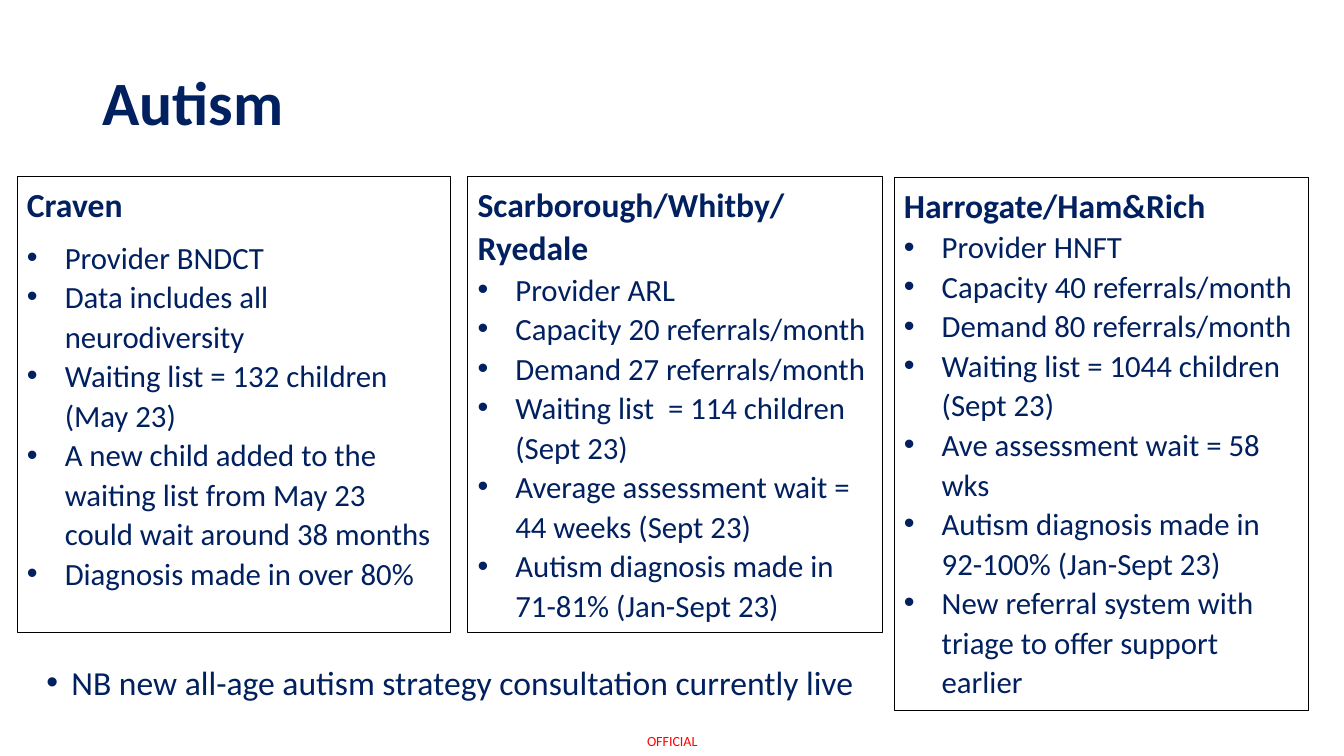
"""Build the autism waiting list slide."""
import pptx
import pptx.dml.color
import pptx.enum.shapes
import pptx.enum.text
import pptx.util
from lxml import etree

Pt = pptx.util.Pt
ALIGN = pptx.enum.text.PP_ALIGN
ANCHOR = pptx.enum.text.MSO_ANCHOR
COLORS = {"navy": "002060", "red": "FF0000", "white": "FFFFFF", "black": "000000"}
FONT = "Calibri"
TITLE = "Autism"
NOTE = "NB new all-age autism strategy consultation currently live"
LABEL = "OFFICIAL"
PANELS = [
    {"box": (12.2, 126, 309.6, 325.4), "head": "Craven", "gap": 8, "items": [
        "Provider BNDCT",
        "Data includes all neurodiversity",
        "Waiting list = 132 children (May 23)",
        "A new child added to the waiting list from May 23 could wait around 38 months",
        "Diagnosis made in over 80%"]},
    {"box": (334.1, 126, 296, 325.4), "head": "Scarborough/Whitby/ Ryedale", "gap": 0, "items": [
        "Provider ARL",
        "Capacity 20 referrals/month",
        "Demand 27 referrals/month",
        "Waiting list  = 114 children (Sept 23)",
        "Average assessment wait = 44 weeks (Sept 23)",
        "Autism diagnosis made in 71-81% (Jan-Sept 23)"]},
    {"box": (638.6, 126.7, 296, 381), "head": "Harrogate/Ham&Rich", "gap": 0, "items": [
        "Provider HNFT",
        "Capacity 40 referrals/month",
        "Demand 80 referrals/month",
        "Waiting list = 1044 children (Sept 23)",
        "Ave assessment wait = 58 wks",
        "Autism diagnosis made in 92-100% (Jan-Sept 23)",
        "New referral system with triage to offer support earlier"]},
]


def rgb(name):
    """Return the colour with this name."""
    return pptx.dml.color.RGBColor.from_string(COLORS[name])


def write(frame, text, size=22, bold=False, color="navy", align=ALIGN.LEFT,
          line=1.07, before=0, after=0, indent=0):
    """Add one paragraph, bulleted when it has an indent."""
    para = frame.paragraphs[0]
    if para.runs:
        para = frame.add_paragraph()
    para.alignment = align
    para.line_spacing = line
    para.space_before = Pt(before)
    para.space_after = Pt(after)
    run = para.add_run()
    run.text = text
    run.font.name = FONT
    run.font.size = Pt(size)
    run.font.bold = bold
    run.font.color.rgb = rgb(color)
    if indent:
        props = para._p.get_or_add_pPr()
        props.set("marL", str(Pt(indent)))
        props.set("indent", str(-Pt(indent)))
        for tag, key, value in (("buFont", "typeface", "Arial"), ("buChar", "char", "•")):
            etree.SubElement(props, pptx.oxml.ns.qn("a:" + tag)).set(key, value)


def label(slide, box, anchor=ANCHOR.TOP, inset=True):
    """Add a wrapped text box and return its frame."""
    frame = slide.shapes.add_textbox(*map(Pt, box)).text_frame
    frame.word_wrap = True
    frame.vertical_anchor = anchor
    if not inset:
        frame.margin_left = frame.margin_right = frame.margin_top = frame.margin_bottom = 0
    return frame


def panel(slide, data):
    """Draw one area's box with its heading and bullets."""
    rect = pptx.enum.shapes.MSO_SHAPE.RECTANGLE
    shape = slide.shapes.add_shape(rect, *map(Pt, data["box"]))
    shape.shadow.inherit = False
    shape.fill.solid()
    shape.fill.fore_color.rgb = rgb("white")
    shape.line.color.rgb = rgb("black")
    shape.line.width = Pt(0.5)
    frame = shape.text_frame
    frame.word_wrap = True
    frame.vertical_anchor = ANCHOR.TOP
    write(frame, data["head"], size=24, bold=True, after=data["gap"])
    last = len(data["items"]) - 1
    for index, item in enumerate(data["items"]):
        write(frame, item, indent=27, after=8 if index == last else 0)


def main():
    """Build and save the slide."""
    deck = pptx.Presentation()
    deck.slide_width, deck.slide_height = Pt(960), Pt(540)
    slide = deck.slides.add_slide(deck.slide_layouts[6])
    write(label(slide, (451.4, 519.1, 57.6, 20.9), ANCHOR.MIDDLE, inset=False), LABEL,
          size=10, color="red", align=ALIGN.CENTER, line=1.0)
    write(label(slide, (66, 23, 828, 104.4), ANCHOR.MIDDLE), TITLE,
          size=44, bold=True, line=0.9)
    write(label(slide, (26, 472.3, 604.8, 52.6)), NOTE,
          size=24, line=0.9, before=10, indent=18)
    for data in PANELS:
        panel(slide, data)
    deck.save("out.pptx")


if __name__ == "__main__":
    main()
